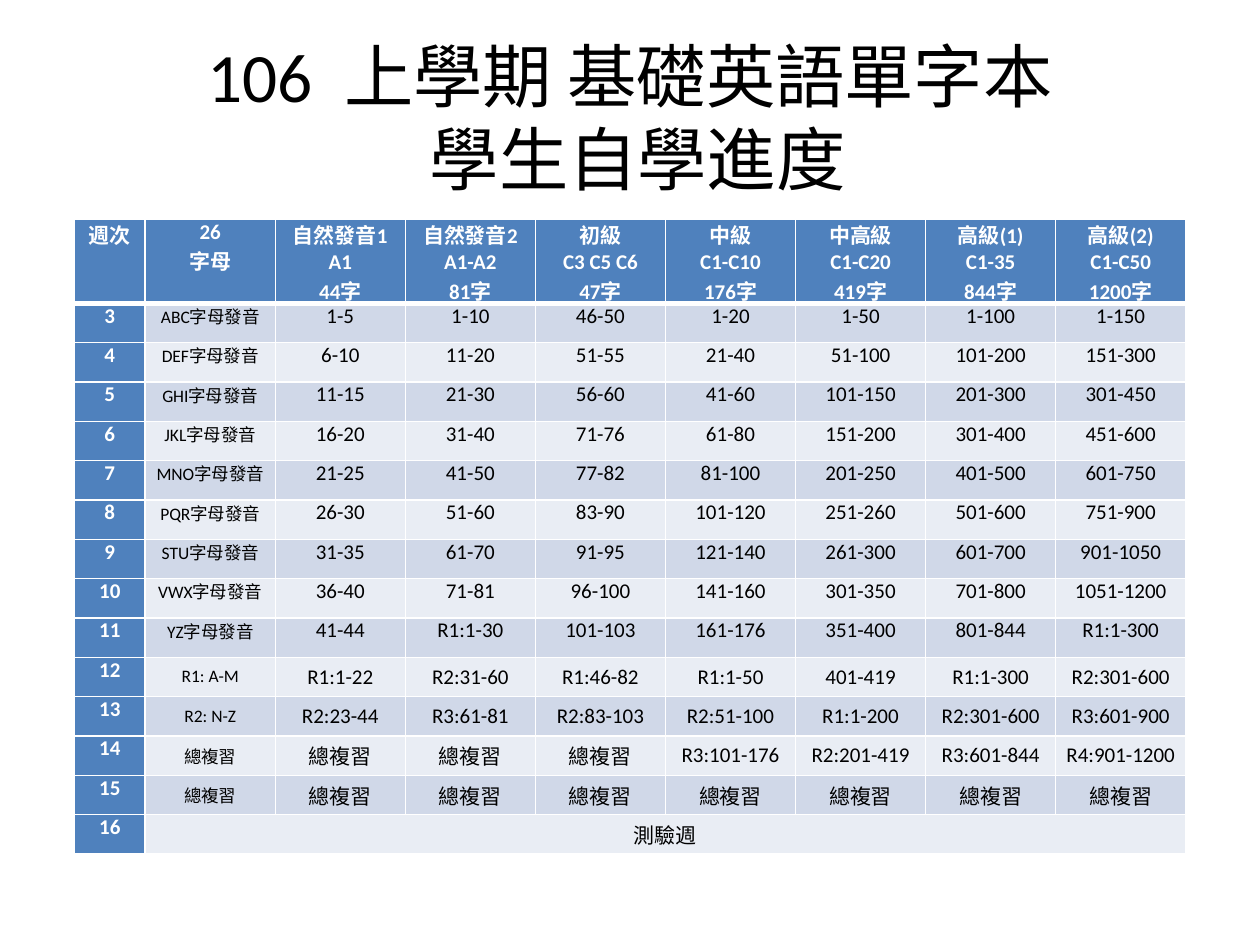
from lxml import etree
from pptx import Presentation
from pptx.dml import color
from pptx.enum import text
from pptx.oxml import ns
from pptx.util import Pt

FONT = "Calibri"
WHITE, BLACK, BLUE = "FFFFFF", "000000", "4F81BD"
BANDS = ["E9EDF4", "D0D8E8"]
HEADS = [
    ["週次"],
    ["26", "字母"],
    ["自然發音1", "A1", "44字"],
    ["自然發音2", "A1-A2", "81字"],
    ["初級", "C3 C5 C6", "47字"],
    ["中級", "C1-C10", "176字"],
    ["中高級", "C1-C20", "419字"],
    ["高級(1)", "C1-35", "844字"],
    ["高級(2)", "C1-C50", "1200字"],
]
WEEKS = """\
ABC字母發音|1-5|1-10|46-50|1-20|1-50|1-100|1-150
DEF字母發音|6-10|11-20|51-55|21-40|51-100|101-200|151-300
GHI字母發音|11-15|21-30|56-60|41-60|101-150|201-300|301-450
JKL字母發音|16-20|31-40|71-76|61-80|151-200|301-400|451-600
MNO字母發音|21-25|41-50|77-82|81-100|201-250|401-500|601-750
PQR字母發音|26-30|51-60|83-90|101-120|251-260|501-600|751-900
STU字母發音|31-35|61-70|91-95|121-140|261-300|601-700|901-1050
VWX字母發音|36-40|71-81|96-100|141-160|301-350|701-800|1051-1200
YZ字母發音|41-44|R1:1-30|101-103|161-176|351-400|801-844|R1:1-300
R1: A-M|R1:1-22|R2:31-60|R1:46-82|R1:1-50|401-419|R1:1-300|R2:301-600
R2: N-Z|R2:23-44|R3:61-81|R2:83-103|R2:51-100|R1:1-200|R2:301-600|R3:601-900
總複習|總複習|總複習|總複習|R3:101-176|R2:201-419|R3:601-844|R4:901-1200
總複習|總複習|總複習|總複習|總複習|總複習|總複習|總複習
測驗週""".splitlines()
FIRST = 3
MIDDLE = 12


def rgb(code):
    return color.RGBColor.from_string(code)


def add_run(para, words, size, tint, bold=False):
    run = para.add_run()
    run.text = words
    run.font.name = FONT
    run.font.size = Pt(size)
    run.font.bold = bold
    run.font.color.rgb = rgb(tint)


def add_title(slide, left, top, width, height):
    frame = slide.shapes.add_textbox(Pt(left), Pt(top), Pt(width), Pt(height)).text_frame
    frame.word_wrap = True
    frame.vertical_anchor = text.MSO_ANCHOR.MIDDLE
    para = frame.paragraphs[0]
    para.alignment = text.PP_ALIGN.CENTER
    add_run(para, "106  上學期 基礎英語單字本", 39.6, BLACK)
    para.add_line_break()
    add_run(para, " 學生自學進度", 39.6, BLACK)


def set_edges(cell, row):
    props = cell._tc.get_or_add_tcPr()
    thick = {"T": row == 1, "B": row == 0}
    for side in "LRTB":
        width = Pt(3 if thick.get(side) else 1)
        line = etree.SubElement(props, ns.qn(f"a:ln{side}"), w=str(width))
        fill = etree.SubElement(line, ns.qn("a:solidFill"))
        etree.SubElement(fill, ns.qn("a:srgbClr"), val=WHITE)


def style_cell(cell, row, tint):
    set_edges(cell, row)
    cell.fill.solid()
    cell.fill.fore_color.rgb = rgb(tint)
    cell.margin_left = cell.margin_right = Pt(4.32)
    cell.margin_top = cell.margin_bottom = 0


def write_cell(cell, lines, size, tint, bold):
    frame = cell.text_frame
    for i, words in enumerate(lines):
        para = frame.add_paragraph() if i else frame.paragraphs[0]
        para.alignment = text.PP_ALIGN.CENTER
        add_run(para, words, size, tint, bold)


def add_plan(slide, left, top, width, height):
    rows = [HEADS]
    for week, line in enumerate(WEEKS, FIRST):
        rows.append([[words] for words in [str(week), *line.split("|")]])
    count = len(HEADS)
    table = slide.shapes.add_table(
        len(rows), count, Pt(left), Pt(top), Pt(width), Pt(height)
    ).table
    week_w, head_h = 40.5, 48
    for c, col in enumerate(table.columns):
        col.width = Pt((width - week_w) / (count - 1) if c else week_w)
    for r, line in enumerate(table.rows):
        line.height = Pt((height - head_h) / (len(rows) - 1) if r else head_h)
    last = len(rows) - 1
    table.cell(last, 1).merge(table.cell(last, count - 1))

    for r, row in enumerate(rows):
        for c in range(count):
            cell = table.cell(r, c)
            head = r == 0 or c == 0
            style_cell(cell, r, BLUE if head else BANDS[r % 2])
            if c >= len(row):
                continue
            if c and r + FIRST - 1 >= MIDDLE:
                cell.vertical_anchor = text.MSO_ANCHOR.MIDDLE
            size = 10 if c == 1 and 0 < r < last else 12
            write_cell(cell, row[c], size, WHITE if head else BLACK, head)


def main():
    deck = Presentation()
    deck.slide_width, deck.slide_height = Pt(720), Pt(540)
    slide = deck.slides.add_slide(deck.slide_layouts[6])
    add_title(slide, 36, 21.6, 648, 90)
    add_plan(slide, 42.5, 125.3, 635.3, 363)
    deck.save("out.pptx")


if __name__ == "__main__":
    main()
